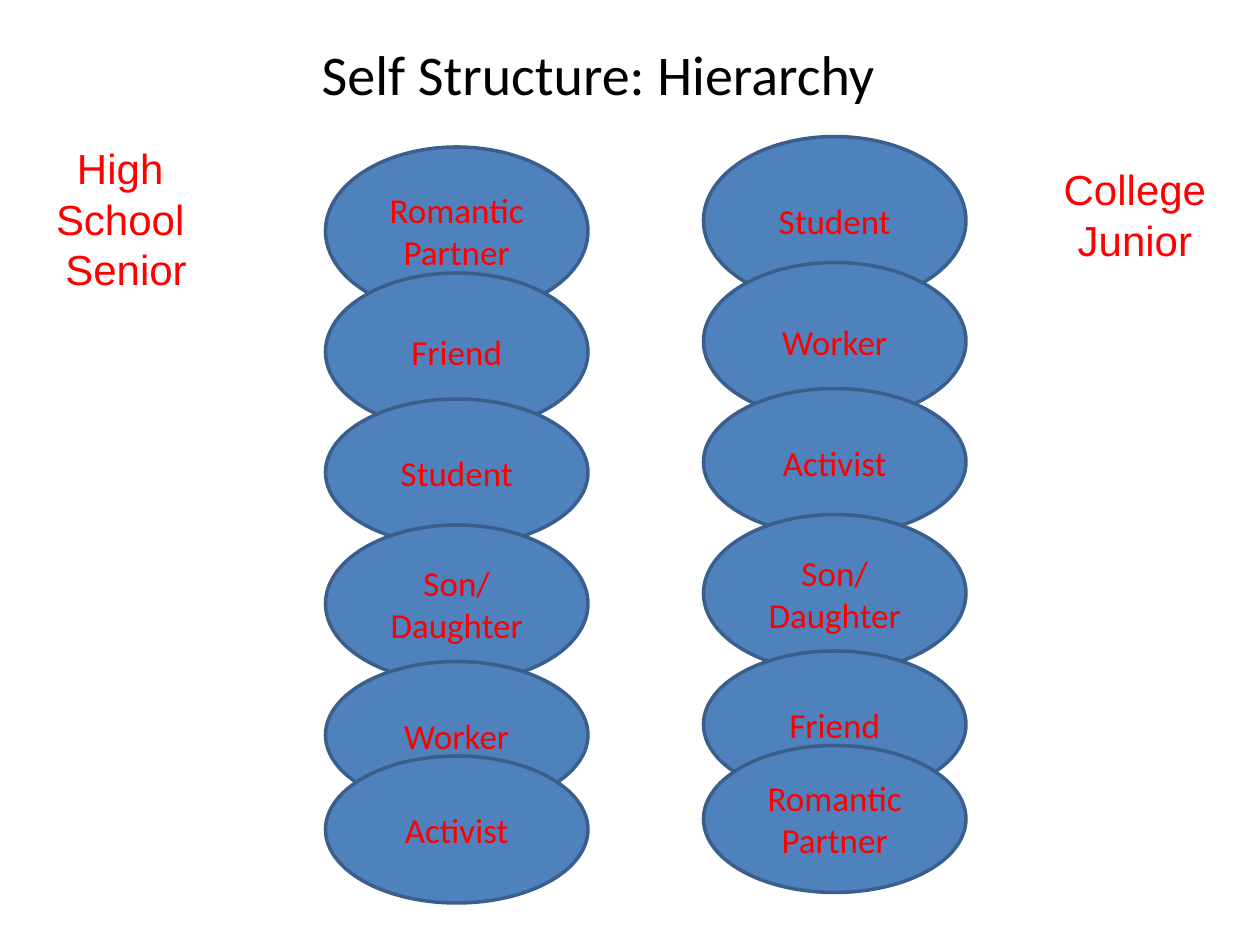
from pptx import Presentation
from pptx.dml.color import RGBColor
from pptx.enum import shapes, text
from pptx.util import Pt

RED = "FF0000"
OFFSETS = (0, 72, 144, 216, 294, 348)
HEIGHTS = (96, 90, 84, 90, 84, 84)
ROLE_WIDTH = 150


def color(value):
    return RGBColor.from_string(value)


def write(tf, lines, size, font, hue):
    for i, line in enumerate(lines):
        p = tf.paragraphs[0] if i == 0 else tf.add_paragraph()
        p.text = line
        p.alignment = text.PP_ALIGN.CENTER
        p.font.size = Pt(size)
        p.font.name = font
        p.font.color.rgb = color(hue)


def add_title(s, left, top, width, height):
    sp = s.shapes.add_textbox(Pt(left), Pt(top), Pt(width), Pt(height))
    sp.fill.solid()
    sp.fill.fore_color.rgb = color("FFFFFF")
    tf = sp.text_frame
    tf.word_wrap = True
    tf.vertical_anchor = text.MSO_ANCHOR.MIDDLE
    write(tf, ["Self Structure: Hierarchy"], 32, "Calibri", "000000")


def add_hierarchy(s, left, top, roles):
    group = s.shapes.add_group_shape()
    for role, offset, height in zip(roles, OFFSETS, HEIGHTS):
        sp = group.shapes.add_shape(shapes.MSO_SHAPE.OVAL, Pt(left), Pt(top + offset),
                                    Pt(ROLE_WIDTH), Pt(height))
        sp.shadow.inherit = False
        sp.fill.solid()
        sp.fill.fore_color.rgb = color("4F81BD")
        sp.line.color.rgb = color("3A5F8C")
        sp.line.width = Pt(2)
        tf = sp.text_frame
        tf.word_wrap = True
        tf.vertical_anchor = text.MSO_ANCHOR.MIDDLE
        write(tf, role.split("\n"), 20, "Calibri", RED)


def add_stage(s, left, top, width, height, lines):
    sp = s.shapes.add_textbox(Pt(left), Pt(top), Pt(width), Pt(height))
    tf = sp.text_frame
    tf.word_wrap = False
    tf.auto_size = text.MSO_AUTO_SIZE.SHAPE_TO_FIT_TEXT
    write(tf, lines, 24, "Arial", RED)


def main():
    prs = Presentation()
    prs.slide_width, prs.slide_height = Pt(720), Pt(540)
    s = prs.slides.add_slide(prs.slide_layouts[6])
    add_title(s, 72, 18, 540, 48)
    add_hierarchy(s, 186, 84, ["Romantic Partner", "Friend", "Student",
                               "Son/\nDaughter", "Worker", "Activist"])
    add_hierarchy(s, 402, 78, ["Student", "Worker", "Activist",
                               "Son/\nDaughter", "Friend", "Romantic Partner"])
    add_stage(s, 24, 78, 96, 94.5, ["High ", "School ", "Senior"])
    add_stage(s, 600, 90, 97, 65.5, ["College", "Junior"])
    prs.save("out.pptx")


if __name__ == "__main__":
    main()
